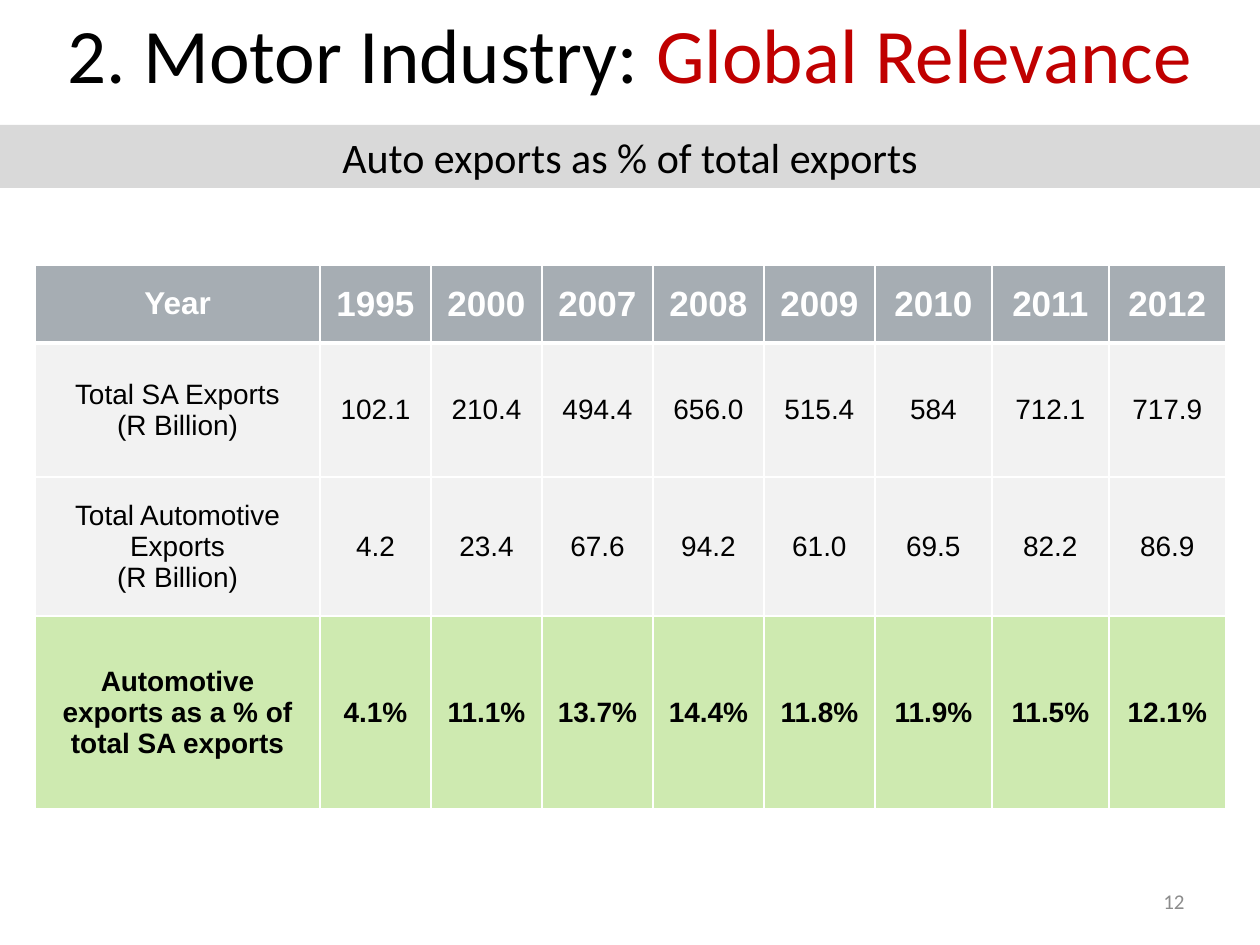
from copy import deepcopy
from dataclasses import dataclass

from pptx import Presentation
from pptx import util as u
from pptx.dml.color import RGBColor
from pptx.enum import shapes, text
from pptx.oxml import parse_xml
from pptx.oxml.ns import nsdecls, qn

PX = 914400 / 126
BLACK = RGBColor(0, 0, 0)
WHITE = RGBColor(255, 255, 255)
RED = RGBColor(0xC0, 0, 0)
BAND = RGBColor(0xD9, 0xD9, 0xD9)
HEAD = RGBColor(0xA6, 0xAD, 0xB3)
PALE = RGBColor(0xF2, 0xF2, 0xF2)
GREEN = RGBColor(0xCE, 0xEA, 0xB0)
GRAY = RGBColor(0x8C, 0x8C, 0x8C)
MID = text.MSO_ANCHOR.MIDDLE
CENTER = text.PP_ALIGN.CENTER


@dataclass
class Font:
    size: int
    color: RGBColor
    name: str = "Calibri"
    bold: bool = False


@dataclass
class Row:
    high: int
    fill: RGBColor
    font: Font
    cells: list[str]
    lead: int  # text size of the first column


def px(n: int) -> u.Emu:
    return u.Emu(round(n * PX))


def style(run, font: Font) -> None:
    look = {"name": font.name, "size": u.Pt(font.size), "bold": font.bold}
    for key, val in look.items():
        setattr(run.font, key, val)
    run.font.color.rgb = font.color


def write(par, words: str, font: Font, align=CENTER) -> None:
    par.text = words
    par.alignment = align
    for run in par.runs:
        style(run, font)
    # Line breaks take the size of the text around them
    for br in par._p.findall(qn("a:br")):
        br.append(deepcopy(par.runs[0]._r.rPr))


def place(shape, left: int, top: int, wide: int, high: int) -> None:
    box = {"left": left, "top": top, "width": wide, "height": high}
    for key, val in box.items():
        setattr(shape, key, px(val))


def edge(cell, side: str, width: int) -> None:
    cell._tc.get_or_add_tcPr().append(parse_xml(
        f'<a:ln{side} {nsdecls("a")} w="{u.Pt(width)}"><a:solidFill>'
        f'<a:srgbClr val="{WHITE}"/></a:solidFill></a:ln{side}>'))


def draw_grid(slide, left: int, top: int, cols: list[int], rows: list[Row]) -> None:
    frame = slide.shapes.add_table(len(rows), len(cols), px(left), px(top),
                                   px(sum(cols)), px(sum(r.high for r in rows)))
    grid = frame.table
    for col, wide in zip(grid.columns, cols):
        col.width = px(wide)
    for i, row in enumerate(rows):
        grid.rows[i].height = px(row.high)
        for j, words in enumerate(row.cells):
            cell = grid.cell(i, j)
            # A thick rule parts the heading from the body
            sides = {"L": 1, "R": 1, "T": 3 if i == 1 else 1, "B": 3 if i == 0 else 1}
            for side, width in sides.items():
                edge(cell, side, width)
            cell.fill.solid()
            cell.fill.fore_color.rgb = row.fill
            cell.vertical_anchor = MID
            size = row.font.size if j else row.lead
            font = Font(size, row.font.color, row.font.name, row.font.bold)
            write(cell.text_frame.paragraphs[0], words, font)


def main() -> None:
    deck = Presentation()
    deck.slide_width, deck.slide_height = px(1260), px(945)
    slide = deck.slides.add_slide(deck.slide_layouts[5])

    # Title
    title = slide.shapes.title
    place(title, 0, 0, 1260, 118)
    frame = title.text_frame
    frame.vertical_anchor = text.MSO_ANCHOR.TOP
    frame.auto_size = text.MSO_AUTO_SIZE.NONE
    par = frame.paragraphs[0]
    write(par, "2. Motor Industry: ", Font(44, BLACK))
    topic = par.add_run()
    topic.text = "Global Relevance"
    style(topic, Font(44, RED))

    # Subtitle band
    band = slide.shapes.add_shape(shapes.MSO_SHAPE.RECTANGLE, 0, px(125), px(1260), px(63))
    band.shadow.inherit = False
    band.fill.solid()
    band.fill.fore_color.rgb = BAND
    band.line.fill.background()
    band.text_frame.vertical_anchor = MID
    write(band.text_frame.paragraphs[0], "Auto exports as % of total exports", Font(24, BLACK))

    # Export table
    plain = Font(16, BLACK, "Arial")
    rows = [
        Row(78, HEAD, Font(20, WHITE, "Arial", True),
            ["Year", "1995", "2000", "2007", "2008", "2009", "2010", "2011", "2012"], 18),
        Row(134, PALE, plain,
            ["Total SA Exports\n(R Billion)", "102.1", "210.4", "494.4", "656.0",
             "515.4", "584", "712.1", "717.9"], 16),
        Row(139, PALE, plain,
            ["Total Automotive Exports\n(R Billion)", "4.2", "23.4", "67.6", "94.2",
             "61.0", "69.5", "82.2", "86.9"], 16),
        Row(193, GREEN, Font(16, BLACK, "Arial", True),
            ["Automotive exports as a % of total SA exports", "4.1%", "11.1%", "13.7%",
             "14.4%", "11.8%", "11.9%", "11.5%", "12.1%"], 16),
    ]
    draw_grid(slide, 35, 265, [285] + [111] * 5 + [117] * 3, rows)

    # Page number
    page = slide.shapes.add_textbox(px(903), px(876), px(294), px(50))
    page.text_frame.word_wrap = True
    page.text_frame.vertical_anchor = MID
    write(page.text_frame.paragraphs[0], "12", Font(12, GRAY), text.PP_ALIGN.RIGHT)

    deck.save("out.pptx")


if __name__ == "__main__":
    main()
